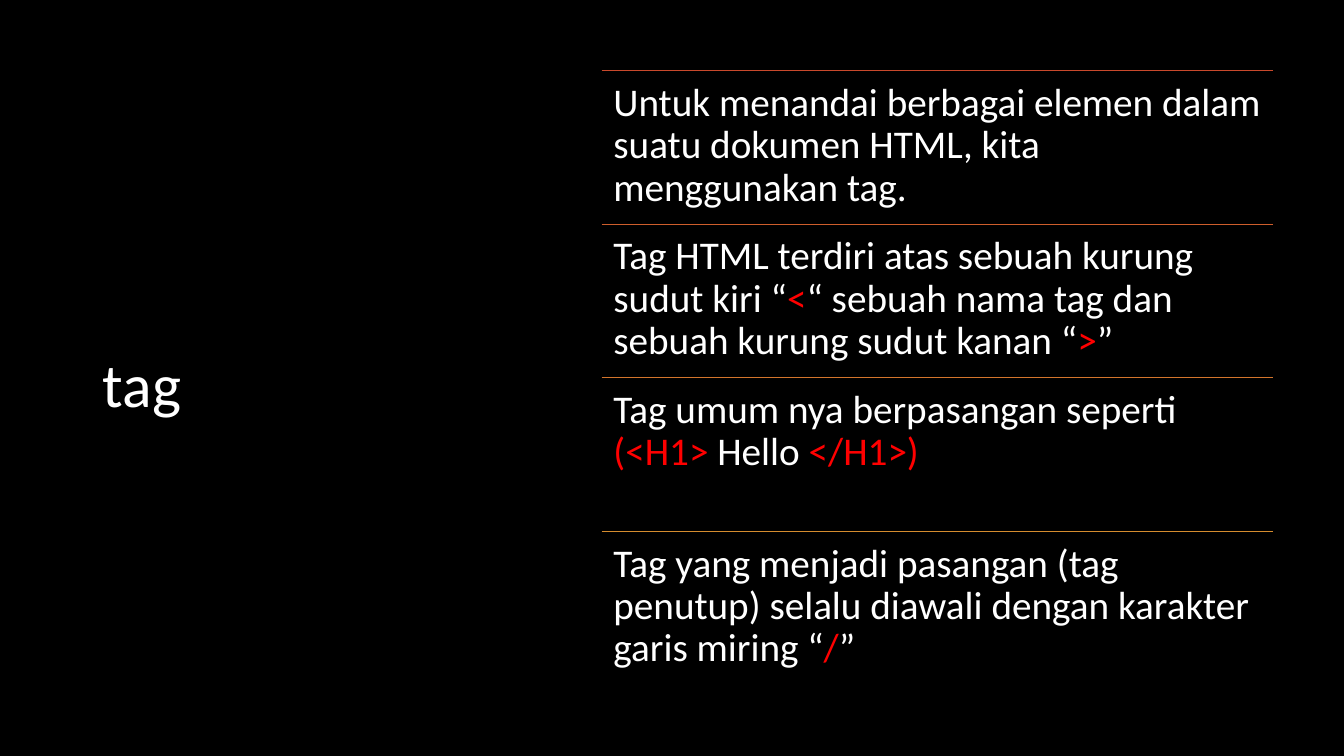
from pptx import Presentation
from pptx.dml.color import RGBColor
from pptx.enum.shapes import MSO_CONNECTOR
from pptx.enum.text import MSO_ANCHOR, MSO_AUTO_SIZE, PP_ALIGN
from pptx.oxml.ns import qn
from pptx.util import Cm, Pt
from lxml.etree import SubElement

COLORS = {"back": "000000", "text": "FFFFFF", "mark": "FF0000"}
RULES = ["C9492C", "CE5E2C", "D3752C", "D58C2E"]

# Pieces alternate between plain and marked text.
POINTS = [
    ["Untuk menandai berbagai elemen dalam suatu dokumen HTML, kita menggunakan tag."],
    ["Tag HTML terdiri atas sebuah kurung sudut kiri “", "<",
     "“ sebuah nama tag dan sebuah kurung sudut kanan “", ">", "”"],
    ["Tag umum nya berpasangan seperti ", "(<H1> ", "Hello ", "</H1>)"],
    ["Tag yang menjadi pasangan (tag penutup) selalu diawali dengan karakter garis miring “",
     "/", "”"],
]

LEFT, TOP, WIDTH, PITCH = 15.16, 1.78, 16.92, 3.87


class Deck:
    font = "Calibri"

    def __init__(self):
        self.file = Presentation()
        self.file.slide_width = Cm(33.87)
        self.file.slide_height = Cm(19.05)
        self.slide = self.file.slides.add_slide(self.file.slide_layouts[5])
        fill = self.slide.background.fill
        fill.solid()
        fill.fore_color.rgb = RGBColor.from_string(COLORS["back"])

    def style(self, run, size, color):
        run.font.name = self.font
        run.font.size = Pt(size)
        run.font.color.rgb = RGBColor.from_string(COLORS[color])

    def title(self, text, left, top, width, height):
        shape = self.slide.shapes.title
        shape.left, shape.top = Cm(left), Cm(top)
        shape.width, shape.height = Cm(width), Cm(height)
        frame = shape.text_frame
        frame.text = text
        frame.auto_size = MSO_AUTO_SIZE.NONE
        frame.vertical_anchor = MSO_ANCHOR.MIDDLE
        para = frame.paragraphs[0]
        para.alignment = PP_ALIGN.LEFT
        para.line_spacing = 0.9
        self.style(para.runs[0], 44, "text")

    def rule(self, left, top, width, color):
        line = self.slide.shapes.add_connector(
            MSO_CONNECTOR.STRAIGHT, Cm(left), Cm(top), Cm(left + width), Cm(top))
        line.line.color.rgb = RGBColor.from_string(color)
        line.line.width = Pt(1)
        SubElement(line._element.spPr, qn("a:effectLst"))

    def panel(self, left, top, width, height):
        """Add a clear outline that holds text."""
        x, y, right, base = Cm(left), Cm(top), Cm(left + width), Cm(top + height)
        form = self.slide.shapes.build_freeform(x, y)
        form.add_line_segments([(right, y), (right, base), (x, base)], close=True)
        shape = form.convert_to_shape()
        shape.shadow.inherit = False
        shape.fill.background()
        shape.line.fill.background()
        return shape

    def point(self, pieces, left, top, width, height):
        """Add a panel in which every second piece is marked."""
        frame = self.panel(left, top, width, height).text_frame
        frame.word_wrap = True
        frame.vertical_anchor = MSO_ANCHOR.TOP
        frame.margin_left = frame.margin_right = Cm(0.3)
        frame.margin_top = frame.margin_bottom = Cm(0.3)
        para = frame.paragraphs[0]
        para.alignment = PP_ALIGN.LEFT
        para.line_spacing = 0.9
        after = SubElement(para._p.get_or_add_pPr(), qn("a:spcAft"))
        SubElement(after, qn("a:spcPct"), val="35000")
        for i, piece in enumerate(pieces):
            run = para.add_run()
            run.text = piece
            self.style(run, 28, "mark" if i % 2 else "text")


def main():
    deck = Deck()
    deck.title("tag", 2.34, 2.26, 9.27, 15.01)
    for row, (pieces, color) in enumerate(zip(POINTS, RULES)):
        top = TOP + row * PITCH
        deck.rule(LEFT, top, WIDTH, color)
        deck.point(pieces, LEFT, top, WIDTH, PITCH)
    deck.file.save("out.pptx")


if __name__ == "__main__":
    main()
